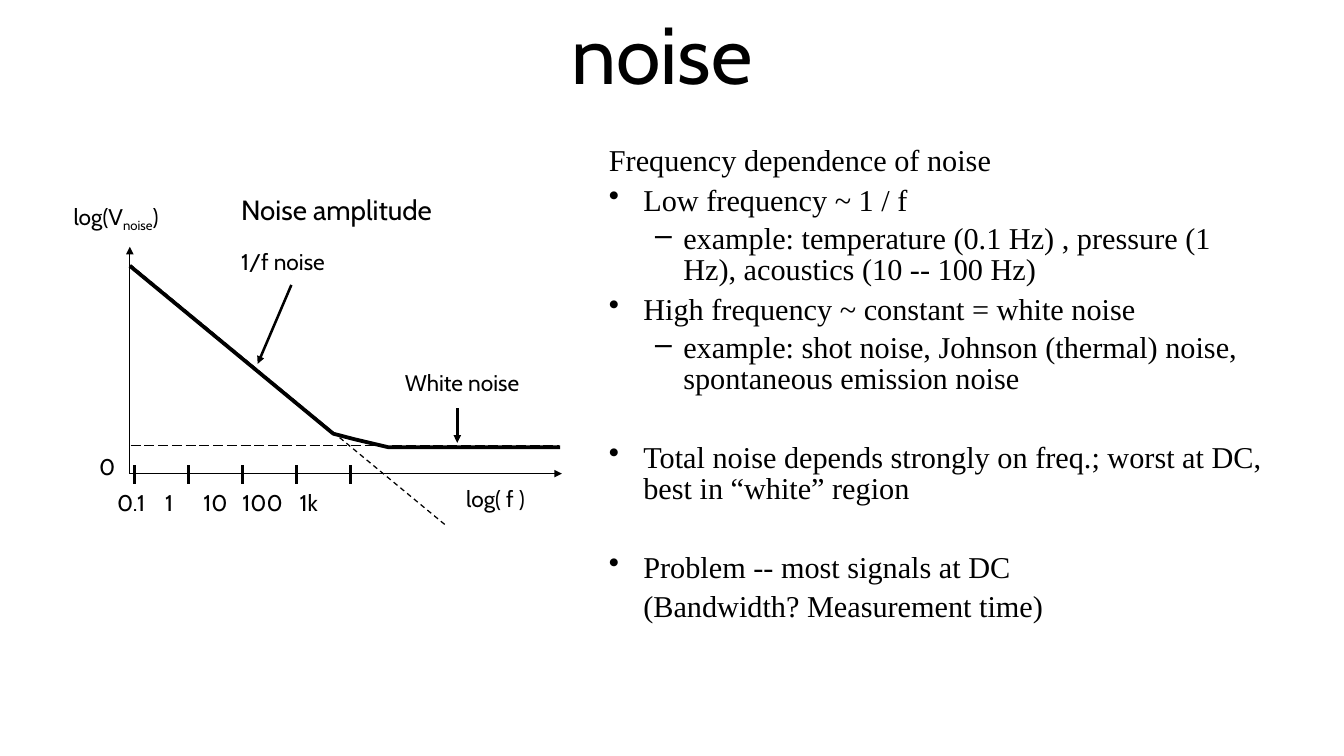
from dataclasses import dataclass

from lxml.etree import SubElement
from pptx import Presentation
from pptx.dml.color import RGBColor
from pptx.enum.dml import MSO_LINE
from pptx.enum.shapes import MSO_CONNECTOR
from pptx.enum.text import MSO_ANCHOR, MSO_AUTO_SIZE, PP_ALIGN
from pptx.oxml.ns import qn
from pptx.util import Emu, Inches, Pt


@dataclass(frozen=True)
class Theme:
    """Colours, fonts, type sizes and line widths of the slide."""
    ink: RGBColor = RGBColor(0, 0, 0)
    display_font: str = "Cabin"
    body_font: str = "Times New Roman"
    title_size: int = 64
    body_size: int = 24
    heading_size: int = 22
    label_size: int = 18
    thin: int = 1
    medium: int = 2
    thick: int = 3


@dataclass(frozen=True)
class Box:
    """A region divided into 100 columns and 100 rows."""
    left: float
    top: float
    width: float
    height: float

    def point(self, column, row):
        """Return the slide position of a grid point."""
        return (Emu(round(self.left + self.width * column / 100)),
                Emu(round(self.top + self.height * row / 100)))

    def area(self, column, row, columns, rows):
        """Return the box that covers the given grid cells."""
        return Box(*self.point(column, row), Emu(round(self.width * columns / 100)),
                   Emu(round(self.height * rows / 100)))

    def bounds(self):
        """Return left, top, width and height."""
        return self.left, self.top, self.width, self.height


THEME = Theme()
SUBSCRIPT = -23000
BLOCK_GAP = 38
LEVELS = {
    "intro": (0, 0.42, -0.38, None),
    "point": (0, 0.42, -0.38, "•"),
    "example": (1, 0.86, -0.31, "–"),
    "remark": (1, 0.42, 0, None),
}
BODY = [
    ("intro", 0, "Frequency dependence of noise"),
    ("point", 7, "Low frequency ~ 1 / f"),
    ("example", 6, "example: temperature (0.1 Hz) , pressure (1 Hz), acoustics (10 -- 100 Hz)"),
    ("point", 7, "High frequency ~ constant = white noise"),
    ("example", 6, "example: shot noise, Johnson (thermal) noise, spontaneous emission noise"),
    ("point", BLOCK_GAP, "Total noise depends strongly on freq.; worst at DC, best in “white” region"),
    ("point", BLOCK_GAP, "Problem -- most signals at DC"),
    ("remark", 7, "(Bandwidth? Measurement time)"),
]
LABELS = [
    (-15.1, -22, 29.4, [("log(V", 0), ("noise", SUBSCRIPT), (")", 0)]),
    (75.8, 102.4, 21.8, [("log( f )", 0)]),
    (23.7, -2, 26.7, [("1/f noise", 0)]),
    (-9.2, 88.4, 8.2, [("0", 0)]),
    (61.6, 51.6, 36.6, [("White noise", 0)]),
]
FREQUENCIES = ["0.1", "1", "10", "100", "1k"]
FREQUENCY_TABS = [0.53, 0.95, 1.38, 2.01]
NOISE_CURVE = [(0, 8.4), (47.1, 82.4), (51.9, 84.8), (59.9, 88.4), (99.6, 88.4)]
TICK_COUNT = 5


def add_run(paragraph, text, font, size, baseline=0):
    """Add one formatted run to a paragraph."""
    run = paragraph.add_run()
    run.text = text
    run.font.name = font
    run.font.size = Pt(size)
    run.font.color.rgb = THEME.ink
    if baseline:
        run.font._element.set("baseline", str(baseline))


def add_text_box(slide, box, inset, left_inset):
    """Add an empty wrapping text box and return its text frame."""
    frame = slide.shapes.add_textbox(*box.bounds()).text_frame
    frame.word_wrap = True
    frame.margin_left = Inches(left_inset)
    frame.margin_top = frame.margin_right = frame.margin_bottom = Inches(inset)
    return frame


def add_label(slide, box, runs, size=THEME.label_size, tabs=()):
    """Add a one-line label with optional tab stops."""
    paragraph = add_text_box(slide, box, 0.06, 0.1).paragraphs[0]
    if tabs:
        tab_list = SubElement(paragraph._p.get_or_add_pPr(), qn("a:tabLst"))
        for position in tabs:
            SubElement(tab_list, qn("a:tab"), pos=str(Inches(position)), algn="l")
    for text, baseline in runs:
        add_run(paragraph, text, THEME.display_font, size, baseline)


def add_line(slide, box, start, end, width=THEME.thin, arrow=False, dash=None):
    """Draw a straight line between two grid points of the box."""
    line = slide.shapes.add_connector(
        MSO_CONNECTOR.STRAIGHT, *box.point(*start), *box.point(*end))
    line.line.color.rgb = THEME.ink
    line.line.width = Pt(width)
    if dash is not None:
        line.line.dash_style = dash
    if arrow:
        SubElement(line.line._get_or_add_ln(), qn("a:tailEnd"), type="triangle")
    SubElement(line._element.spPr, qn("a:effectLst"))


def add_noise_curve(slide, box):
    """Draw the noise amplitude as an open outline."""
    points = [box.point(*position) for position in NOISE_CURVE]
    builder = slide.shapes.build_freeform(*points[0])
    builder.add_line_segments(points[1:], close=False)
    curve = builder.convert_to_shape()
    curve.shadow.inherit = False
    curve.fill.background()
    curve.line.color.rgb = THEME.ink
    curve.line.width = Pt(THEME.thick)


def add_title(slide, box):
    """Place and format the title placeholder."""
    title = slide.shapes.title
    title.left, title.top, title.width, title.height = box.bounds()
    frame = title.text_frame
    frame.auto_size = MSO_AUTO_SIZE.NONE
    frame.vertical_anchor = MSO_ANCHOR.MIDDLE
    frame.margin_left = frame.margin_right = Inches(0.04)
    frame.margin_top = frame.margin_bottom = Inches(0.04)
    paragraph = frame.paragraphs[0]
    paragraph.alignment = PP_ALIGN.CENTER
    add_run(paragraph, "noise", THEME.display_font, THEME.title_size)


def add_body(slide, box):
    """Write the bulleted text on frequency dependence."""
    frame = add_text_box(slide, box, 0.06, 0.06)
    for index, (kind, space_before, text) in enumerate(BODY):
        paragraph = frame.add_paragraph() if index else frame.paragraphs[0]
        level, margin, indent, bullet = LEVELS[kind]
        properties = paragraph._p.get_or_add_pPr()
        properties.set("marL", str(Inches(margin)))
        properties.set("indent", str(Inches(indent)))
        if bullet:
            SubElement(properties, qn("a:buChar"), char=bullet)
        paragraph.level = level
        paragraph.line_spacing = 0.85
        paragraph.space_before = Pt(space_before)
        add_run(paragraph, text, THEME.body_font, THEME.body_size)


def add_noise_diagram(slide, box):
    """Draw the noise spectrum, with the box spanned by its axes."""
    add_line(slide, box, (0, 100), (100, 100), arrow=True)
    add_line(slide, box, (0, 100), (0, 0), arrow=True)
    add_line(slide, box, (72.9, 122.4), (0.2, 8), dash=MSO_LINE.DASH)
    add_line(slide, box, (0.2, 87.6), (99.4, 87.6), dash=MSO_LINE.LONG_DASH)
    add_line(slide, box, (75.8, 71.2), (75.8, 86.4), THEME.medium, arrow=True)
    add_line(slide, box, (37.4, 16.8), (29.6, 51.6), THEME.medium, arrow=True)
    add_noise_curve(slide, box)
    for index in range(TICK_COUNT):
        column = 1.1 + 12.5 * index
        add_line(slide, box, (column, 96.4), (column, 104.4), THEME.medium)
    for column, row, columns, runs in LABELS:
        add_label(slide, box.area(column, row, columns, 19.6), runs)
    add_label(slide, box.area(23.7, -26.4, 56.3, 22.8),
              [("Noise amplitude", 0)], THEME.heading_size)
    add_label(slide, box.area(-5, 104.4, 66, 19.6),
              [("\t".join(FREQUENCIES), 0)], tabs=FREQUENCY_TABS)


def main():
    """Build and save the slide."""
    presentation = Presentation()
    presentation.slide_width = Inches(14.81)
    presentation.slide_height = Inches(8.33)
    slide = presentation.slides.add_slide(presentation.slide_layouts.get_by_name("Title Only"))
    page = Box(0, 0, presentation.slide_width, presentation.slide_height)
    add_title(slide, page.area(9, 0.7, 80.5, 12.5))
    add_body(slide, page.area(44.63, 18.73, 49.76, 71.3))
    add_noise_diagram(slide, page.area(9.66, 32.65, 32.14, 30))
    presentation.save("out.pptx")


if __name__ == "__main__":
    main()
